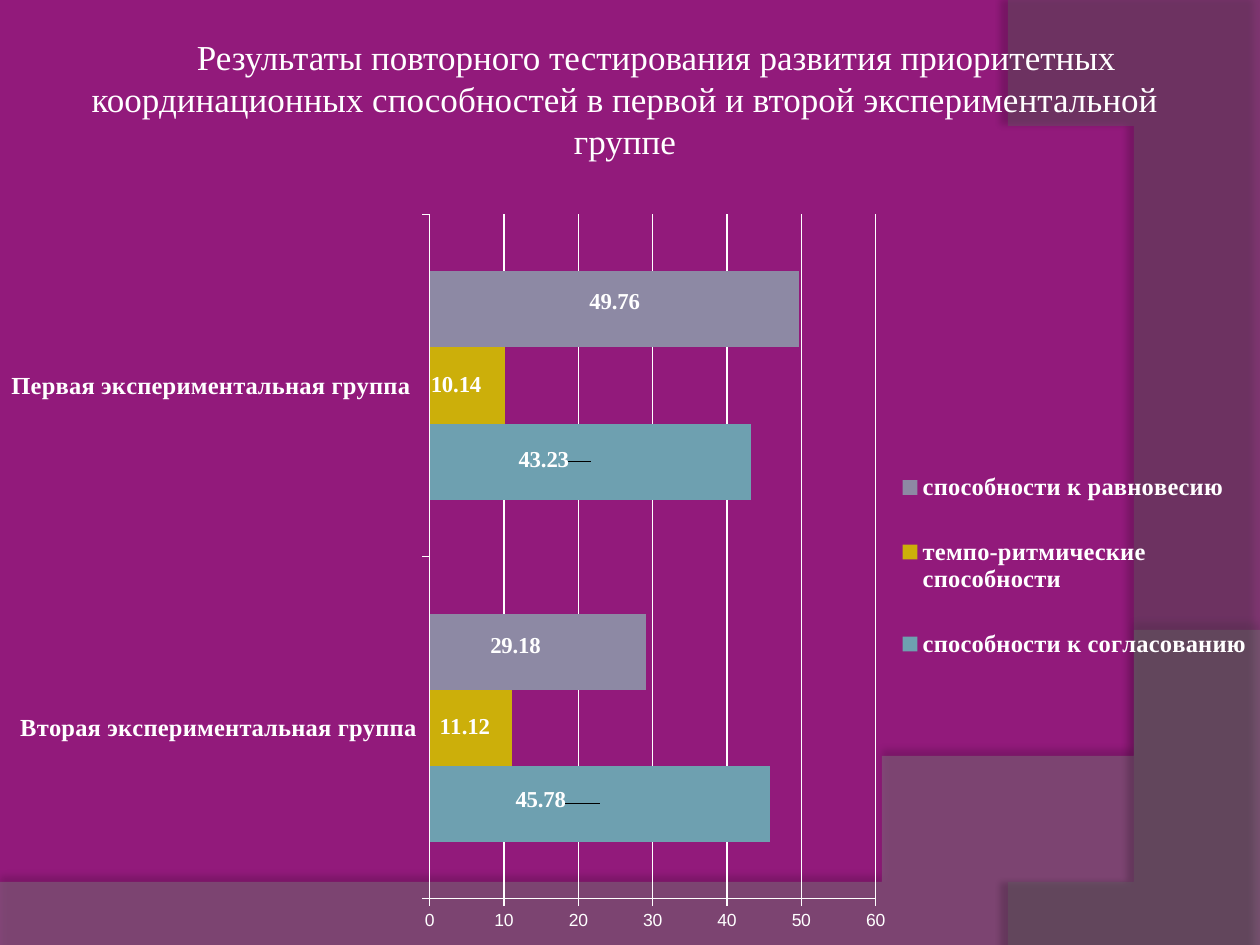
from lxml import etree
from pptx import Presentation
from pptx.chart.data import CategoryChartData
from pptx.dml.color import RGBColor
from pptx.enum.chart import XL_CHART_TYPE, XL_LABEL_POSITION, XL_LEGEND_POSITION, XL_TICK_MARK
from pptx.enum.text import MSO_ANCHOR, PP_ALIGN
from pptx.oxml import parse_xml
from pptx.oxml.ns import nsdecls, qn
from pptx.util import Inches, Pt

BAR = XL_CHART_TYPE.BAR_CLUSTERED
CENTER = XL_LABEL_POSITION.CENTER
RIGHT = XL_LEGEND_POSITION.RIGHT
OUTSIDE = XL_TICK_MARK.OUTSIDE
MIDDLE = MSO_ANCHOR.MIDDLE
ALIGN_CENTER = PP_ALIGN.CENTER

W, H = 10, 7.5
WHITE = "FFFFFF"
SERIF, SANS = "Times New Roman", "Arial"
TITLE = ("Результаты повторного тестирования развития приоритетных координационных "
         "способностей в первой и второй экспериментальной группе")
GROUPS = ["Вторая экспериментальная группа", "Первая экспериментальная группа "]
SERIES = [
    ("способности к согласованию", "6EA0B0", (45.78, 43.23), ((-0.047, -0.004), (-0.037, -0.002))),
    ("темпо-ритмические способности", "CCAF0A", (11.12, 10.14), ((-0.005, 0), (-0.009, 0))),
    ("способности к равновесию", "8D89A4", (29.18, 49.76), ((-0.018, -0.007), (0, -0.009))),
]


def rgb(value):
    """Return the colour of a hex string."""
    return RGBColor.from_string(value)


def set_font(font, size, name=SERIF, bold=False):
    """Give a font its size, face, weight and the white text colour."""
    font.size, font.name, font.bold = Pt(size), name, bold
    font.color.rgb = rgb(WHITE)


def bezier(p0, p1, p2, p3, steps=60):
    """Return points along a cubic curve."""
    points = []
    for i in range(steps + 1):
        t = i / steps
        weights = ((1 - t) ** 3, 3 * t * (1 - t) ** 2, 3 * t * t * (1 - t), t ** 3)
        points.append(tuple(sum(w * p[axis] for w, p in zip(weights, (p0, p1, p2, p3)))
                            for axis in (0, 1)))
    return points


def add_wave(s, points, color, alpha, shadow):
    """Draw a translucent, softly shadowed outline behind everything else."""
    builder = s.shapes.build_freeform(*points[0], scale=Inches(1))
    builder.add_line_segments(points[1:], close=True)
    sp = builder.convert_to_shape()
    sp.fill.solid()
    sp.fill.fore_color.rgb = rgb(color)
    sp.line.fill.background()
    srgb = sp.fill._xPr.find(".//" + qn("a:srgbClr"))
    etree.SubElement(srgb, qn("a:alpha"), val=str(alpha * 1000))
    opacity, blur, dist, angle = shadow
    sp._element.spPr.append(parse_xml(
        f'<a:effectLst {nsdecls("a")}><a:outerShdw blurRad="{Pt(blur)}" dist="{Pt(dist)}" '
        f'dir="{angle * 60000}" algn="ctr" rotWithShape="0"><a:srgbClr val="000000">'
        f'<a:alpha val="{opacity * 1000}"/></a:srgbClr></a:outerShdw></a:effectLst>'))


def add_background(s):
    """Fill the slide and lay the two waves over it."""
    s.background.fill.solid()
    s.background.fill.fore_color.rgb = rgb("921A7B")
    bottom = [(0, H)] + [(W, H)] + bezier((W, 5.2), (5.59, 7.29), (3.91, 7.19), (0, 7.05))
    side = [(W, 0.02), (W, H)] + bezier((8.21, H), (9.35, 6.19), (10.18, 3), (8, 0))
    add_wave(s, bottom, "7F7F7F", 45, (35, 4, 3.5, 270))
    add_wave(s, side, "5E5E5E", 40, (45, 4, 4, 180))


def place_title(s, x, y, w, h):
    """Move the title placeholder into its box and write the heading."""
    sp = s.shapes.title
    s.shapes._spTree.append(sp._element)
    sp.left, sp.top, sp.width, sp.height = map(Inches, (x, y, w, h))
    tf = sp.text_frame
    tf.text = TITLE
    tf.word_wrap, tf.vertical_anchor = True, MIDDLE
    p = tf.paragraphs[0]
    p.alignment = ALIGN_CENTER
    p._p.get_or_add_pPr().set("indent", str(Inches(0.5)))
    set_font(p.runs[0].font, 20)


def manual_layout(x, y, w=None, h=None, inner=False):
    """Return a chart layout element, an offset if it has no size."""
    parts = '<c:layoutTarget val="inner"/>' if inner else ""
    if w:
        parts += '<c:xMode val="edge"/><c:yMode val="edge"/>'
    parts += f'<c:x val="{x}"/><c:y val="{y}"/>'
    if w:
        parts += f'<c:w val="{w}"/><c:h val="{h}"/>'
    return parse_xml(f'<c:layout {nsdecls("c")}><c:manualLayout>{parts}</c:manualLayout></c:layout>')


def set_layout(parent, layout, index):
    """Put a layout element in place of any earlier one."""
    for old in parent.findall(qn("c:layout")):
        parent.remove(old)
    parent.insert(index, layout)


def style_axes(chart):
    """Format the two axes and the gridlines."""
    for axis, size, name, bold in ((chart.category_axis, 14, SERIF, True),
                                   (chart.value_axis, 10, SANS, False)):
        set_font(axis.tick_labels.font, size, name, bold)
        axis.major_tick_mark = OUTSIDE
        axis.format.line.color.rgb = rgb(WHITE)
        axis.format.line.width = Pt(0.75)
    axis = chart.value_axis
    axis.minimum_scale, axis.maximum_scale, axis.major_unit = 0, 60, 10
    axis.has_major_gridlines = True
    axis.major_gridlines.format.line.color.rgb = rgb(WHITE)
    axis.major_gridlines.format.line.width = Pt(0.75)


def style_series(plot):
    """Colour the bars and place their value labels."""
    plot.gap_width, plot.overlap, plot.vary_by_categories = 150, 0, False
    for ser, (_, color, _, offsets) in zip(plot.series, SERIES):
        ser.format.fill.solid()
        ser.format.fill.fore_color.rgb = rgb(color)
        set_font(ser.data_labels.font, 13, bold=True)
        ser.data_labels.show_value = True
        for i, offset in enumerate(offsets):
            label = ser.points[i].data_label
            set_font(label.font, 13, bold=True)
            label.position = CENTER
        for dlbl, offset in zip(ser._element.iter(qn("c:dLbl")), offsets):
            set_layout(dlbl, manual_layout(*offset), 1)


def add_results_chart(s, x, y, w, h):
    """Add the bar chart of both groups to its box."""
    data = CategoryChartData()
    data.categories = GROUPS
    for name, _, values, _ in SERIES:
        data.add_series(name, values)
    chart = s.shapes.add_chart(BAR, *map(Inches, (x, y, w, h)), data).chart
    set_font(chart.font, 10, SANS)
    chart.has_title = False
    style_axes(chart)
    style_series(chart.plots[0])
    chart.has_legend = True
    legend = chart.legend
    legend.position, legend.include_in_layout = RIGHT, False
    set_font(legend.font, 14, bold=True)
    set_layout(legend._element, manual_layout(0.715, 0.33, 0.28, 0.34), 1)
    plot_area = chart._chartSpace.chart.plotArea
    set_layout(plot_area, manual_layout(0.341, 0.037, 0.354, 0.902, inner=True), 0)


def main():
    """Build the slide and save it."""
    prs = Presentation()
    prs.slide_width, prs.slide_height = Inches(W), Inches(H)
    s = prs.slides.add_slide(prs.slide_layouts[5])
    add_background(s)
    place_title(s, 0.47, 0.23, 8.98, 1.11)
    add_results_chart(s, 0, 1.48, W, H - 1.48)
    prs.save("out.pptx")


if __name__ == "__main__":
    main()
